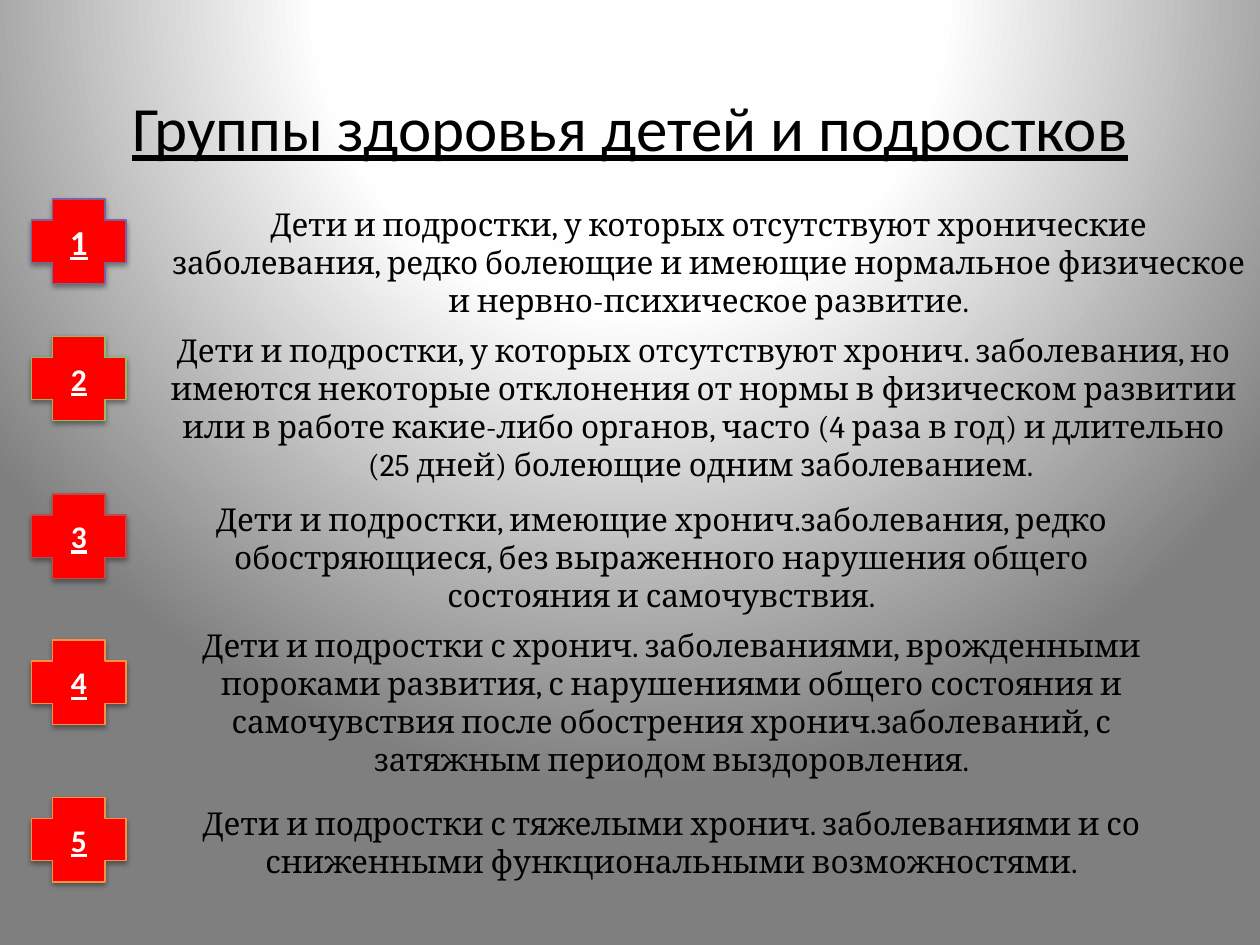
"""Build a slide that lists the five health groups of children and teenagers."""
from dataclasses import dataclass

from pptx import Presentation
from pptx.dml.color import RGBColor
from pptx.enum.shapes import MSO_SHAPE
from pptx.enum.text import MSO_ANCHOR, MSO_AUTO_SIZE, PP_ALIGN
from pptx.oxml import parse_xml
from pptx.oxml.ns import nsdecls, qn
from pptx.slide import Slide
from pptx.text.text import TextFrame
from pptx.util import Inches, Pt

STOPS = ((0, "FFFFFF"), (40, "FEFEFE"), (100, "7F7F7F"))
SHADOW = (
    f'<a:outerShdw {nsdecls("a")} blurRad="40000" dist="20000" dir="5400000" rotWithShape="0">'
    '<a:srgbClr val="000000"><a:alpha val="38000"/></a:srgbClr></a:outerShdw>'
)


@dataclass
class Group:
    cross_top: float
    outline: str
    left: float
    top: float
    width: float
    height: float
    text: str
    number_size: int = 18


GROUPS = (
    Group(1.58, "7D60A0", 1.25, 1.58, 8.75, 1.01,
          "Дети и подростки, у которых отсутствуют хронические заболевания, редко болеющие "
          "и имеющие нормальное физическое и нервно-психическое развитие.", 20),
    Group(2.67, "98B955", 1.17, 2.58, 8.83, 1.31,
          "Дети и подростки, у которых отсутствуют хронич. заболевания, но имеются некоторые "
          "отклонения от нормы в физическом развитии или в работе какие-либо органов, часто "
          "(4 раза в год) и длительно (25 дней) болеющие одним заболеванием. "),
    Group(3.92, "BF4C48", 1.25, 3.92, 8, 1.01,
          "Дети и подростки, имеющие хронич.заболевания, редко обостряющиеся, без выраженного "
          "нарушения общего состояния и самочувствия."),
    Group(5.08, "F69240", 1.33, 4.92, 8, 1.31,
          "Дети и подростки с хронич. заболеваниями, врожденными пороками развития, "
          "с нарушениями общего состояния и самочувствия после обострения "
          "хронич.заболеваний, с затяжным периодом выздоровления."),
    Group(6.33, "F69240", 1.33, 6.33, 8, 0.71,
          "Дети и подростки с тяжелыми хронич. заболеваниями и со сниженными "
          "функциональными возможностями."),
)


def rgb(value: str) -> RGBColor:
    return RGBColor.from_string(value)


def set_background(s: Slide) -> None:
    stops = "".join(
        f'<a:gs pos="{pos * 1000}"><a:srgbClr val="{color}"/></a:gs>' for pos, color in STOPS
    )
    s.element.cSld.insert(0, parse_xml(
        f'<p:bg {nsdecls("p", "a")}><p:bgPr><a:gradFill rotWithShape="1"><a:gsLst>{stops}</a:gsLst>'
        '<a:path path="circle"><a:fillToRect l="50000" t="-80000" r="50000" b="180000"/></a:path>'
        '</a:gradFill><a:effectLst/></p:bgPr></p:bg>'
    ))


def write(tf: TextFrame, text: str, size: int, font: str = "Calibri", color: str = "000000",
          bold: bool = False, underline: bool = False) -> None:
    tf.word_wrap = True
    p = tf.paragraphs[0]
    p.text = text
    p.alignment = PP_ALIGN.CENTER
    p.font.name = font
    p.font.size = Pt(size)
    p.font.bold = bold
    p.font.underline = underline
    p.font.color.rgb = rgb(color)


def add_title(s: Slide, text: str) -> None:
    tf = s.shapes.add_textbox(Inches(0.5), Inches(0.42), Inches(9), Inches(1.17)).text_frame
    tf.vertical_anchor = MSO_ANCHOR.MIDDLE
    write(tf, text, 36, underline=True)


def add_cross(s: Slide, number: int, group: Group) -> None:
    sp = s.shapes.add_shape(MSO_SHAPE.CROSS, Inches(0.25), Inches(group.cross_top),
                            Inches(0.75), Inches(0.67))
    sp.fill.solid()
    sp.fill.fore_color.rgb = rgb("FF0000")
    sp.line.color.rgb = rgb(group.outline)
    sp.line.width = Pt(0.75)
    sp.shadow.inherit = False
    sp.element.spPr.find(qn("a:effectLst")).append(parse_xml(SHADOW))
    sp.text_frame.vertical_anchor = MSO_ANCHOR.MIDDLE
    write(sp.text_frame, str(number), group.number_size, color="FFFFFF", bold=True, underline=True)


def add_description(s: Slide, group: Group) -> None:
    tf = s.shapes.add_textbox(Inches(group.left), Inches(group.top),
                              Inches(group.width), Inches(group.height)).text_frame
    write(tf, group.text, 18, "Cambria")
    tf.auto_size = MSO_AUTO_SIZE.SHAPE_TO_FIT_TEXT


def main() -> None:
    prs = Presentation()
    prs.slide_width, prs.slide_height = Inches(10), Inches(7.5)
    s = prs.slides.add_slide(prs.slide_layouts[6])
    set_background(s)
    add_title(s, "Группы здоровья детей и подростков")
    for number, group in enumerate(GROUPS, 1):
        add_cross(s, number, group)
        add_description(s, group)
    prs.save("out.pptx")


if __name__ == "__main__":
    main()
